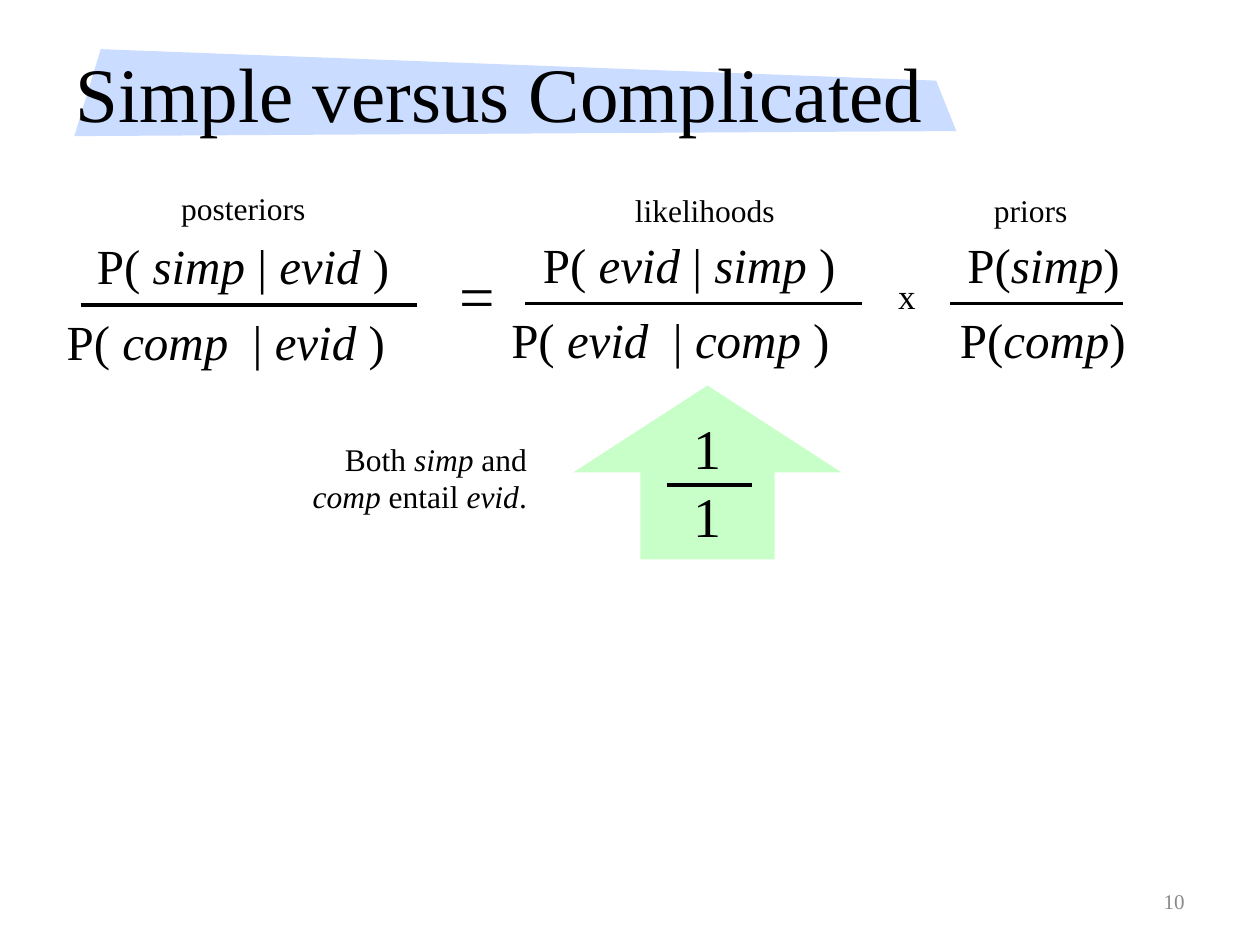
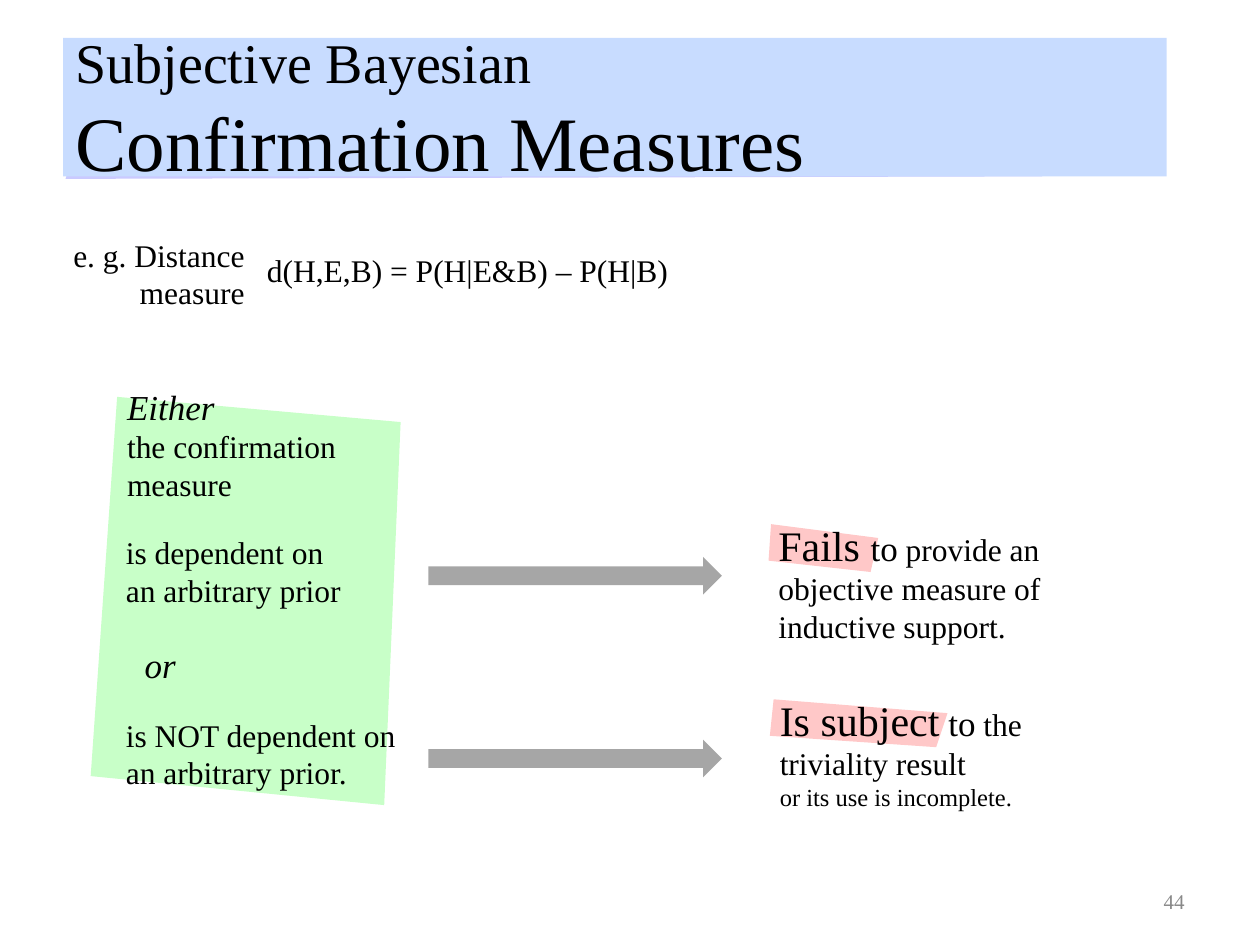
from dataclasses import dataclass
from lxml.etree import SubElement
from pptx import Presentation
from pptx.dml.color import RGBColor
from pptx.enum.shapes import MSO_CONNECTOR, MSO_SHAPE
from pptx.enum.text import MSO_ANCHOR, MSO_AUTO_SIZE, PP_ALIGN
from pptx.oxml.ns import qn
from pptx.util import Inches, Pt


@dataclass(frozen=True)
class Theme:
    font: str = "Times New Roman"
    ink: str = "000000"
    muted: str = "898989"
    title_band: str = "CADCFF"
    title_fill: str = "C8DCFF"
    title_edge: str = "CACAFF"
    green: str = "C8FFC8"
    pink: str = "FFC8C8"
    arrow: str = "A6A6A6"
    title: int = 44
    subtitle: int = 32
    formula: int = 28
    equals: int = 36
    ratio: int = 32
    strong: int = 24
    lead: int = 20
    body: int = 18
    note: int = 14
    footer: int = 12
    rule: int = 2


T = Theme()
LEFT, RIGHT = PP_ALIGN.LEFT, PP_ALIGN.RIGHT


def write(tf, paragraphs, align=LEFT, color=T.ink):
    """Text between asterisks is set in italics."""
    for i, runs in enumerate(paragraphs):
        p = tf.paragraphs[0] if i == 0 else tf.add_paragraph()
        p.alignment = align
        for text, size in runs:
            for j, part in enumerate(text.split("*")):
                if part:
                    r = p.add_run()
                    r.text = part
                    r.font.name = T.font
                    r.font.size = Pt(size)
                    r.font.italic = j % 2 == 1
                    r.font.color.rgb = RGBColor.from_string(color)


def add_text(s, box, paragraphs, wrap=False, align=LEFT):
    tf = s.shapes.add_textbox(*map(Inches, box)).text_frame
    tf.word_wrap = wrap
    write(tf, paragraphs, align)


prs = Presentation()
prs.slide_width, prs.slide_height = Inches(10), Inches(7.5)

slides = [
    ("10", 0.86, [[("Simple versus Complicated", T.title)]], None, [
        (T.title_band, [(0.8, 0.39), (7.43, 0.64), (7.59, 1.04), (0.59, 1.08)]),
    ], [(MSO_SHAPE.UP_ARROW, (4.55, 3.06, 2.13, 1.38), T.green)]),
    ("44", 1.1, [[("Subjective Bayesian", T.subtitle)],
                 [("Confirmation Measures", T.title)]], T.title_fill, [
        (T.title_edge, [(0.84, 0.38), (8.14, 0.92), (8.27, 1.4), (0.52, 1.42)]),
        (T.green, [(0.93, 3.15), (3.18, 3.35), (3.05, 6.39), (0.72, 6.16)]),
        (T.pink, [(6.12, 4.16), (6.97, 4.27), (6.91, 4.54), (6.1, 4.45)]),
        (T.pink, [(6.14, 5.55), (7.52, 5.66), (7.43, 5.93), (6.11, 5.84)]),
    ], [(MSO_SHAPE.RIGHT_ARROW, (3.4, y, 2.33, 0.3), T.arrow) for y in (4.42, 5.87)]),
]

for number, title_height, title_lines, title_fill, patches, arrows in slides:
    s = prs.slides.add_slide(prs.slide_layouts[5])
    filled = []
    for color, points in patches:
        corners = [(Inches(x), Inches(y)) for x, y in points]
        fb = s.shapes.build_freeform(*corners[0], scale=1.0)
        fb.add_line_segments(corners[1:], close=True)
        filled.append((fb.convert_to_shape(), color))
    for preset, box, color in arrows:
        filled.append((s.shapes.add_shape(preset, *map(Inches, box)), color))
    for sp, color in filled:
        sp.shadow.inherit = False
        sp.fill.solid()
        sp.fill.fore_color.rgb = RGBColor.from_string(color)
        sp.line.fill.background()

    title = s.shapes.title
    title.left, title.top = Inches(0.5), Inches(0.3)
    title.width, title.height = Inches(8.76), Inches(title_height)
    filled[0][0].element.addnext(title.element)
    if title_fill:
        title.fill.solid()
        title.fill.fore_color.rgb = RGBColor.from_string(title_fill)
    title.text_frame.auto_size = MSO_AUTO_SIZE.NONE
    title.text_frame.vertical_anchor = MSO_ANCHOR.MIDDLE
    write(title.text_frame, title_lines)

    footer = s.shapes.add_textbox(Inches(7.17), Inches(6.95), Inches(2.33), Inches(0.4))
    footer.text_frame.word_wrap = True
    footer.text_frame.vertical_anchor = MSO_ANCHOR.MIDDLE
    write(footer.text_frame, [[(number, T.footer)]], RIGHT, T.muted)

simple, measures = prs.slides

fractions = [
    (2.42, 0.64, 3.31, ("posteriors", 1.34, 1.45, 1.2),
     ("P( *simp *| *evid *)", 0.67, 2.55), ("P( *comp * | *evid* )", 0.43, 2.78)),
    (2.41, 4.17, 6.84, ("likelihoods", 4.94, 1.47, 1.32),
     ("P( *evid* | *simp *)", 4.21, 2.55), ("P( *evid * | *comp *)", 3.96, 2.76)),
    (2.41, 7.54, 8.91, ("priors", 7.79, 1.47, 0.79),
     ("P(*simp*)", 7.58, 1.42), ("P(*comp*)", 7.52, 1.53)),
]
bars = [(5.29, 5.97, 3.85)]
for bar_y, start, end, (label, x, y, w), top, bottom in fractions:
    bars.append((start, end, bar_y))
    add_text(simple, (x, y, w, 0.4), [[(label, T.body)]])
    for (formula, x, w), y in ((top, bar_y - 0.6), (bottom, bar_y)):
        add_text(simple, (x, y, w, 0.57), [[(formula, T.formula)]])

for start, end, y in bars:
    bar = simple.shapes.add_connector(
        MSO_CONNECTOR.STRAIGHT, Inches(start), Inches(y), Inches(end), Inches(y))
    bar.line.width = Pt(T.rule)
    bar.line.color.rgb = RGBColor.from_string(T.ink)
    SubElement(bar.element.spPr, qn("a:effectLst"))

add_text(simple, (3.55, 1.99, 0.49, 0.71), [[("=", T.equals)]])
add_text(simple, (7.03, 2.13, 0.34, 0.44), [[("x", T.lead)]])
for y in (3.23, 3.77):
    add_text(simple, (5.41, y, 0.43, 0.64), [[("1", T.ratio)]])
add_text(simple, (2.17, 3.44, 2.11, 0.71),
         [[("Both *simp* and *comp* entail *evid*.", T.body)]], True, RIGHT)

add_text(measures, (0.44, 1.82, 1.6, 0.71),
         [[("e. g. Distance measure", T.body)]], True, RIGHT)
add_text(measures, (2.02, 1.94, 3.42, 0.4),
         [[("d(H,E,B) = P(H|E&B) – P(H|B)", T.body)]])
add_text(measures, (1.05, 5.06, 0.53, 0.44), [[("*or*", T.lead)]])

statements = [
    ((0.91, 3.01, 2.45, 1.04),
     [[("*Either*", T.lead)], [("the confirmation measure", T.body)]]),
    ((0.9, 4.18, 1.92, 0.71), [[("is dependent on an arbitrary prior", T.body)]]),
    ((0.9, 5.63, 2.52, 0.71), [[("is NOT dependent on an arbitrary prior.", T.body)]]),
    ((6.08, 4.07, 2.6, 1.11),
     [[("Fails ", T.strong), ("to", T.lead),
       (" provide an objective measure of inductive support.", T.body)]]),
    ((6.09, 5.46, 2.95, 1.04),
     [[("Is subject", T.strong), (" to", T.lead), (" the triviality result", T.body)],
      [("or its use is incomplete.", T.note)]]),
]
for box, paragraphs in statements:
    add_text(measures, box, paragraphs, True)

prs.save("out.pptx")
